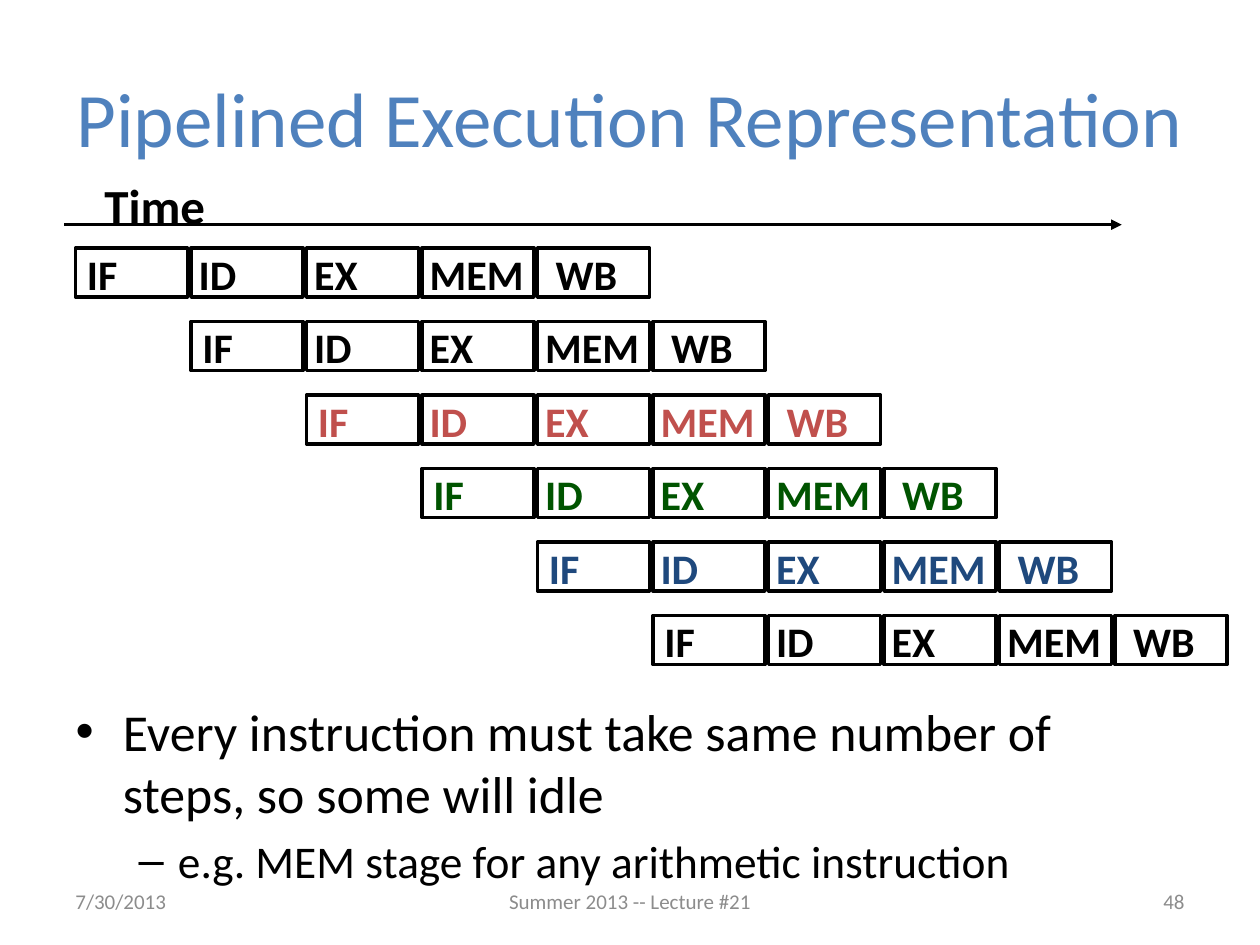
from pptx import Presentation
from pptx.dml.color import RGBColor
from pptx.enum.shapes import MSO_CONNECTOR, MSO_SHAPE
from pptx.enum.text import MSO_ANCHOR, MSO_AUTO_SIZE, PP_ALIGN
from pptx.oxml.ns import qn
from pptx.util import Pt
from lxml import etree

RECTANGLE = MSO_SHAPE.RECTANGLE
STRAIGHT = MSO_CONNECTOR.STRAIGHT
TOP, MIDDLE = MSO_ANCHOR.TOP, MSO_ANCHOR.MIDDLE
LEFT, CENTER, RIGHT = PP_ALIGN.LEFT, PP_ALIGN.CENTER, PP_ALIGN.RIGHT
NO_FIT = MSO_AUTO_SIZE.NONE

BLACK, GRAY, TITLE_BLUE = "000000", "8C8C8C", "4F81BD"

# Stage name, label offset from its cell, label width
STAGES = [("IF", -0.6, 32), ("ID", -2.8, 36), ("EX", -2.8, 40),
          ("MEM", -2.8, 68), ("WB", 3.2, 54)]
INSTRUCTION_COLORS = [BLACK, BLACK, "C0504D", "005400", "1F497D", BLACK]
GRID_LEFT, GRID_TOP = 43.2, 141.8
STEP_X, STEP_Y = 66, 42
CELL_WIDTH, CELL_HEIGHT = 64, 28


def color(hex_string):
    return RGBColor.from_string(hex_string)


def write(para, text, size=24, fill=BLACK, bold=False, align=None, font="Calibri"):
    para.alignment = align
    span = para.add_run()
    span.text = text
    span.font.name = font
    span.font.size = Pt(size)
    span.font.bold = bold
    span.font.color.rgb = color(fill)


class SlideBuilder:
    line_color = BLACK
    line_width = 2

    def __init__(self, page):
        self.page = page

    def placeholder(self, index, frame, paragraphs, anchor=TOP, **style):
        """Fill a template placeholder with (text, level, size) entries."""
        box = self.page.placeholders[index]
        box.left, box.top, box.width, box.height = map(Pt, frame)
        text_frame = box.text_frame
        text_frame.auto_size = NO_FIT
        text_frame.vertical_anchor = anchor
        for number, (text, level, size) in enumerate(paragraphs):
            para = text_frame.add_paragraph() if number else text_frame.paragraphs[0]
            para.level = level
            write(para, text, size=size, **style)

    def label(self, frame, text, parent=None, wrap=False, anchor=TOP, **style):
        shapes = (parent or self.page).shapes
        box = shapes.add_textbox(*map(Pt, frame))
        box.text_frame.word_wrap = wrap
        box.text_frame.vertical_anchor = anchor
        write(box.text_frame.paragraphs[0], text, **style)

    def cell(self, frame, parent):
        box = parent.shapes.add_shape(RECTANGLE, *map(Pt, frame))
        box.shadow.inherit = False
        box.fill.background()
        box.line.color.rgb = color(self.line_color)
        box.line.width = Pt(self.line_width)

    def arrow(self, start, end, parent):
        line = parent.shapes.add_connector(STRAIGHT, *map(Pt, start + end))
        line.line.color.rgb = color(self.line_color)
        line.line.width = Pt(self.line_width)
        etree.SubElement(line.line._get_or_add_ln(), qn("a:tailEnd"), type="triangle")
        etree.SubElement(line._element.spPr, qn("a:effectLst"))

    def instruction(self, row, fill):
        """One instruction: five stages, starting one step later per row."""
        group = self.page.shapes.add_group_shape()
        top = GRID_TOP + row * STEP_Y
        for column, (stage, offset, width) in enumerate(STAGES):
            left = GRID_LEFT + (row + column) * STEP_X
            self.cell((left, top, CELL_WIDTH, CELL_HEIGHT), group)
            self.label((left + offset, top - 3.4, width, 36), stage,
                       parent=group, fill=fill, bold=True)


def main():
    deck = Presentation()
    deck.slide_width, deck.slide_height = Pt(720), Pt(540)
    page = deck.slides.add_slide(deck.slide_layouts[1])
    builder = SlideBuilder(page)

    # Title and list
    builder.placeholder(0, (36, 21.6, 648, 90),
                        [("Pipelined Execution Representation", 0, 44)],
                        anchor=MIDDLE, fill=TITLE_BLUE, align=CENTER)
    builder.placeholder(1, (36, 396, 648, 109.4), [
        ("Every instruction must take same number of steps, so some will idle", 0, 29.6),
        ("e.g. MEM stage for any arithmetic instruction", 1, 25.9),
    ])

    # Pipeline diagram
    for row, fill in enumerate(INSTRUCTION_COLORS):
        builder.instruction(row, fill)

    # Time axis
    axis = page.shapes.add_group_shape()
    builder.arrow((36.8, 128.4), (641, 128.4), axis)
    builder.label((52.6, 96.5, 80, 40), "Time", parent=axis, size=28, bold=True)

    # Footer
    for left, width, text, align in [
        (36, 168, "7/30/2013", LEFT),
        (246, 228, "Summer 2013 -- Lecture #21", CENTER),
        (516, 168, "48", RIGHT),
    ]:
        builder.label((left, 500.5, width, 28.8), text, wrap=True,
                      anchor=MIDDLE, size=12, fill=GRAY, align=align)

    deck.save("out.pptx")


if __name__ == "__main__":
    main()
